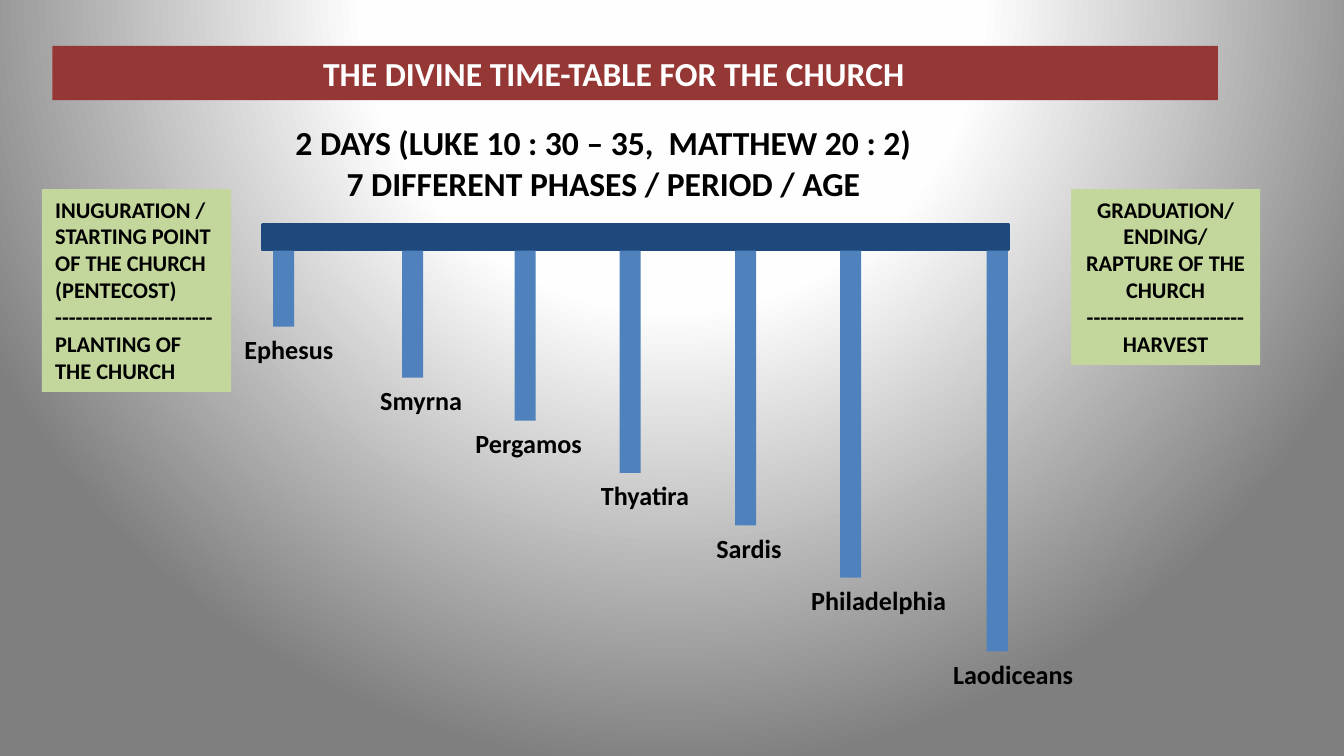
from dataclasses import dataclass

from lxml.etree import SubElement
from pptx import Presentation
from pptx.dml.color import RGBColor
from pptx.enum.shapes import MSO_SHAPE
from pptx.enum.text import MSO_ANCHOR, MSO_AUTO_SIZE, PP_ALIGN
from pptx.oxml.ns import qn
from pptx.util import Pt

WHITE = RGBColor(0xFF, 0xFF, 0xFF)
BLACK = RGBColor(0, 0, 0)
RED = RGBColor(0x95, 0x37, 0x35)
GREEN = RGBColor(0xC3, 0xD6, 0x9B)
NAVY = RGBColor(0x1F, 0x49, 0x7D)
BLUE = RGBColor(0x4F, 0x81, 0xBD)
BACKGROUND_STOPS = [(0, "FFFFFF"), (40, "FEFEFE"), (100, "7F7F7F")]

FONT = "Calibri"
BAR_TOP, BAR_WIDTH = 134.3, 11.3
LABEL_HEIGHT = 24.2
DIVIDER = "-" * 23


@dataclass
class Box:
    left: float
    top: float
    width: float
    height: float

    def lengths(self) -> tuple:
        return Pt(self.left), Pt(self.top), Pt(self.width), Pt(self.height)


@dataclass
class Church:
    name: str
    bar_left: float
    bar_bottom: float
    label_left: float
    label_width: float


@dataclass
class Note:
    box: Box
    lines: list[str]
    align: PP_ALIGN


CHURCHES = [
    Church("Ephesus", 146.3, 175, 123.8, 73),
    Church("Smyrna", 215.4, 202.4, 196.6, 68),
    Church("Pergamos", 275.7, 225.4, 247.6, 73),
    Church("Thyatira", 331.9, 253.4, 314.8, 62),
    Church("Sardis", 393.8, 281.5, 376.7, 56),
    Church("Philadelphia", 450, 309.5, 427.5, 90),
    Church("Laodiceans", 528.6, 349, 503.5, 84),
]

NOTES = [
    Note(Box(22.5, 101.3, 101.3, 108.7),
         ["INUGURATION /", "STARTING POINT", "OF THE CHURCH", "(PENTECOST)",
          DIVIDER, "PLANTING OF THE CHURCH"], PP_ALIGN.LEFT),
    Note(Box(573.8, 101.3, 101.3, 94.3),
         ["GRADUATION/", "ENDING/", "RAPTURE OF THE CHURCH",
          DIVIDER, "HARVEST"], PP_ALIGN.CENTER),
]


def set_background(s) -> None:
    """Radial gradient centred above the slide."""
    s.background.fill.gradient()
    grad = s.element.find(".//" + qn("a:gradFill"))
    for child in list(grad):
        grad.remove(child)
    stops = SubElement(grad, qn("a:gsLst"))
    for percent, colour in BACKGROUND_STOPS:
        stop = SubElement(stops, qn("a:gs"), pos=str(percent * 1000))
        SubElement(stop, qn("a:srgbClr"), val=colour)
    circle = SubElement(grad, qn("a:path"), {"path": "circle"})
    SubElement(circle, qn("a:fillToRect"),
               l="50000", t="-80000", r="50000", b="180000")


def write(sp, lines: list[str], size: float, colour: RGBColor = BLACK,
          align: PP_ALIGN = PP_ALIGN.LEFT) -> None:
    tf = sp.text_frame
    tf.text = "\n".join(lines)
    tf.word_wrap = True
    tf.auto_size = MSO_AUTO_SIZE.NONE
    tf.vertical_anchor = MSO_ANCHOR.TOP
    for p in tf.paragraphs:
        p.alignment = align
        for r in p.runs:
            r.font.name = FONT
            r.font.size = Pt(size)
            r.font.bold = True
            r.font.color.rgb = colour


def add_rect(s, box: Box, colour: RGBColor):
    sp = s.shapes.add_shape(MSO_SHAPE.RECTANGLE, *box.lengths())
    sp.shadow.inherit = False
    sp.fill.solid()
    sp.fill.fore_color.rgb = colour
    sp.line.fill.background()
    return sp


def add_text(s, box: Box, lines: list[str], size: float,
             align: PP_ALIGN = PP_ALIGN.LEFT) -> None:
    sp = s.shapes.add_textbox(*box.lengths())
    write(sp, lines, size, align=align)


def add_church(s, church: Church) -> None:
    bar = Box(church.bar_left, BAR_TOP, BAR_WIDTH, church.bar_bottom - BAR_TOP)
    add_rect(s, bar, BLUE)
    label = Box(church.label_left, church.bar_bottom,
                church.label_width, LABEL_HEIGHT)
    add_text(s, label, [church.name], 14)


def add_note(s, note: Note) -> None:
    write(add_rect(s, note.box, GREEN), note.lines, 12, align=note.align)


def main() -> None:
    prs = Presentation()
    prs.slide_width, prs.slide_height = Pt(720), Pt(405)
    s = prs.slides.add_slide(prs.slide_layouts[5])
    set_background(s)

    # Title band
    title = s.shapes.title
    title.left, title.top, title.width, title.height = Box(
        28.1, 24.6, 624.4, 29.1).lengths()
    title.fill.solid()
    title.fill.fore_color.rgb = RED
    write(title, ["THE DIVINE TIME-TABLE FOR THE CHURCH"], 18, WHITE)
    title.text_frame.margin_left = Pt(145)

    # Notes at the start and the end of the timeline
    for note in NOTES:
        add_note(s, note)

    # Heading above the timeline
    add_text(s, Box(146.2, 62, 354.2, 51),
             ["2 DAYS (LUKE 10 : 30 – 35,  MATTHEW 20 : 2)",
              "7 DIFFERENT PHASES / PERIOD / AGE"], 18, PP_ALIGN.CENTER)

    # Timeline beam with one hanging bar per church
    beam = add_rect(s, Box(140.6, 120.3, 399.4, 13.2), NAVY)
    beam.line.color.rgb = NAVY
    beam.line.width = Pt(2)
    for church in CHURCHES:
        add_church(s, church)

    prs.save("out.pptx")


if __name__ == "__main__":
    main()
